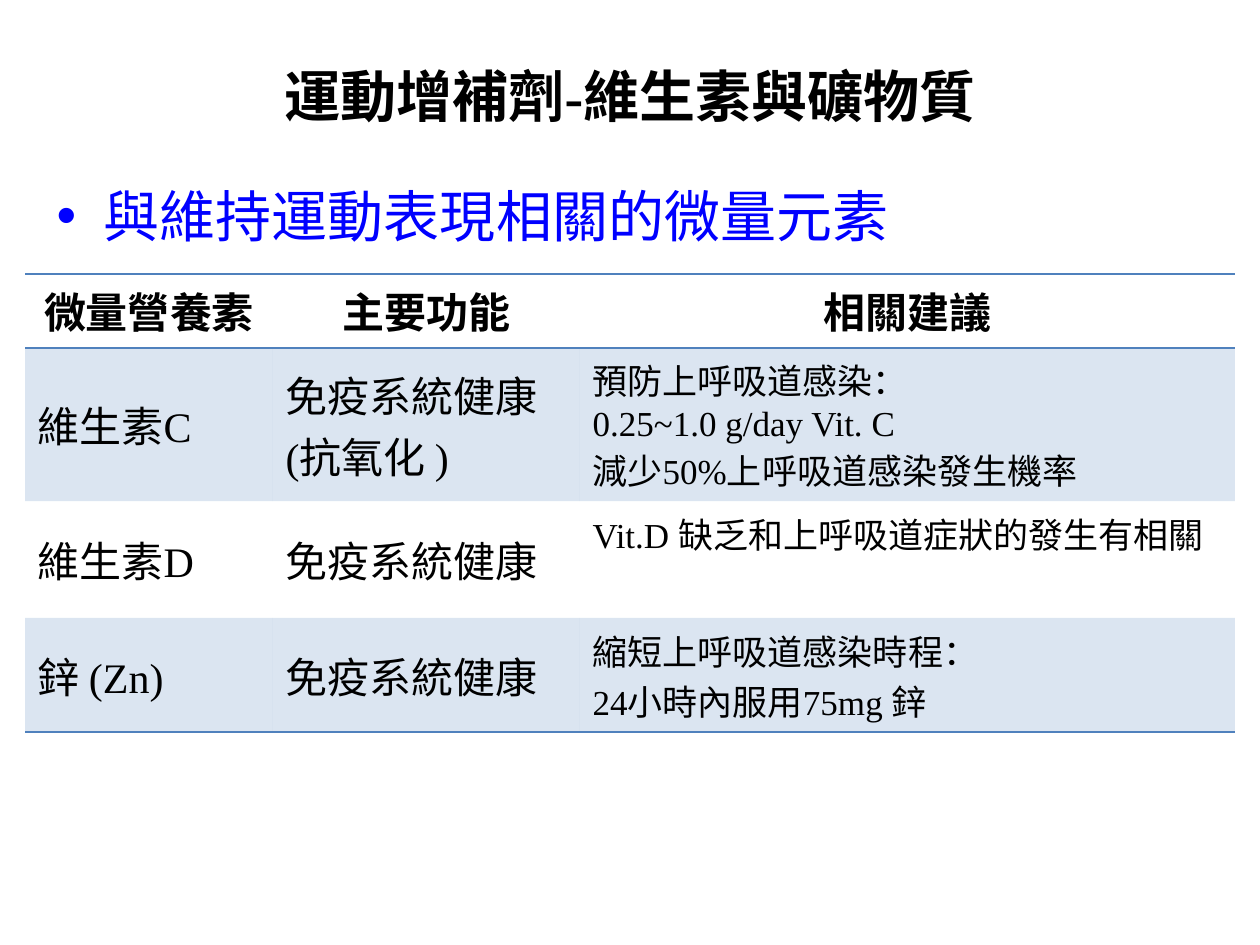
from lxml.etree import SubElement
from pptx import Presentation
from pptx.dml.color import RGBColor
from pptx.enum.text import MSO_ANCHOR as Anchor, MSO_AUTO_SIZE as AutoSize, PP_ALIGN as Align
from pptx.oxml.ns import qn
from pptx.util import Emu, Pt

PX_PER_INCH = 126
COLORS = {"text": "000000", "accent": "0000FF", "table": "4F81BD"}
FONT = "Times New Roman"
NO_STYLE = "{2D5ABB26-0587-4C30-8999-92F81FD0307C}"
BAND_ALPHA = 20

COLUMNS = [248, 307, 655]
ROWS = [74, 152, 117, 114]
TABLE = [
    ["微量營養素", "主要功能", "相關建議"],
    ["維生素C", "免疫系統健康\n(抗氧化 )",
     "預防上呼吸道感染：\n0.25~1.0 g/day Vit. C\n減少50%上呼吸道感染發生機率"],
    ["維生素D", "免疫系統健康", "Vit.D 缺乏和上呼吸道症狀的發生有相關"],
    ["鋅 (Zn)", "免疫系統健康", "縮短上呼吸道感染時程：\n24小時內服用75mg 鋅"],
]


def px(value):
    return Emu(round(value * 914400 / PX_PER_INCH))


def write(frame, text, size, color="text", bold=False, align=Align.LEFT):
    frame.text = text
    for paragraph in frame.paragraphs:
        paragraph.alignment = align
        paragraph.space_before = Pt(0)
        for name, value in {"name": FONT, "size": Pt(size), "bold": bold}.items():
            setattr(paragraph.font, name, value)
        paragraph.font.color.rgb = RGBColor.from_string(COLORS[color])


def place_text(shape, box, text, **text_format):
    shape.left, shape.top, shape.width, shape.height = map(px, box)
    shape.text_frame.auto_size = AutoSize.NONE
    write(shape.text_frame, text, 32, **text_format)


def add_border(cell, side):
    line = SubElement(cell._tc.get_or_add_tcPr(), qn(f"a:{side}"), w=str(Pt(1)))
    fill = SubElement(line, qn("a:solidFill"))
    SubElement(fill, qn("a:srgbClr"), val=COLORS["table"])


def fill_cell(cell, banded):
    if not banded:
        cell.fill.background()
        return
    cell.fill.solid()
    cell.fill.fore_color.rgb = RGBColor.from_string(COLORS["table"])
    color = cell._tc.tcPr.find(qn("a:solidFill")).find(qn("a:srgbClr"))
    SubElement(color, qn("a:alpha"), val=str(BAND_ALPHA * 1000))


def add_nutrient_table(slide, left, top):
    box = map(px, (left, top, sum(COLUMNS), sum(ROWS)))
    table = slide.shapes.add_table(len(ROWS), len(COLUMNS), *box).table
    table.first_row = table.horz_banding = False
    table._tbl.tblPr.find(qn("a:tableStyleId")).text = NO_STYLE
    for column, width in zip(table.columns, COLUMNS):
        column.width = px(width)
    for r, (row, height) in enumerate(zip(table.rows, ROWS)):
        row.height = px(height)
        header = r == 0
        for c, cell in enumerate(row.cells):
            advice = c == len(COLUMNS) - 1
            write(cell.text_frame, TABLE[r][c], 20 if advice and not header else 24,
                  bold=header, align=Align.CENTER if header else Align.LEFT)
            cell.vertical_anchor = Anchor.TOP if header or advice else Anchor.MIDDLE
            # Rules above and below the header, and below the last row
            if header:
                add_border(cell, "lnT")
            if r in (0, len(ROWS) - 1):
                add_border(cell, "lnB")
            fill_cell(cell, banded=r % 2 == 1)


def main():
    presentation = Presentation()
    presentation.slide_width, presentation.slide_height = px(1260), px(945)
    slide = presentation.slides.add_slide(presentation.slide_layouts[1])

    # Title and bullet
    place_text(slide.shapes.title, (63, 16, 1134, 158), "運動增補劑-維生素與礦物質",
               bold=True, align=Align.CENTER)
    place_text(slide.placeholders[1], (44, 175, 1172, 89),
               "與維持運動表現相關的微量元素", color="accent")

    # Micronutrient table
    add_nutrient_table(slide, 25, 274)
    presentation.save("out.pptx")


if __name__ == "__main__":
    main()
